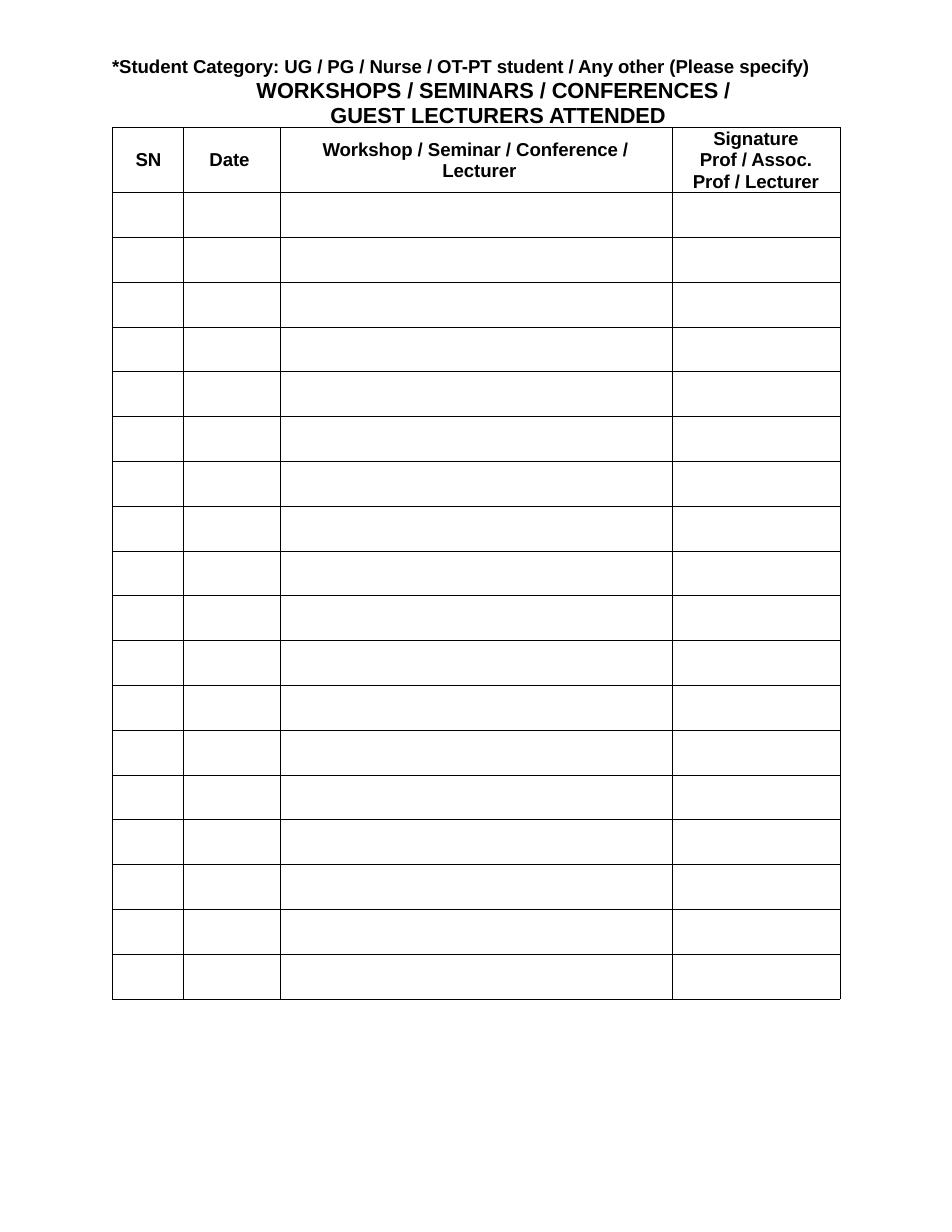
from lxml.etree import SubElement
from pptx import Presentation
from pptx.dml.color import RGBColor
from pptx.enum.text import MSO_ANCHOR as Anchor, MSO_AUTO_SIZE as AutoSize, PP_ALIGN as Align
from pptx.oxml.ns import qn
from pptx.util import Inches, Pt

BLACK = RGBColor(0, 0, 0)
FONT = "Arial"

# Content: "\v" is a line break inside a paragraph
CATEGORY = "*Student Category: UG / PG / Nurse / OT-PT student / Any other (Please specify)"
HEADING = "WORKSHOPS / SEMINARS / CONFERENCES /\vGUEST LECTURERS ATTENDED"
COLUMNS = [  # heading, width, text format
    ("SN", 0.64, dict(margin=0.21)),
    ("Date", 0.86, dict(margin=0.23)),
    ("Workshop / Seminar / Conference /\vLecturer", 3.5,
     dict(margin=1.45, indent=-1.07, line=13.8)),
    ("Signature\vProf / Assoc.\vProf / Lecturer", 1.5,
     dict(align=Align.CENTER, line=13.8)),
]
EMPTY_ROWS = 18
HEADER_HEIGHT, ROW_HEIGHT = 0.58, 0.4
TABLE_LEFT, TABLE_TOP = 1, 1.14


def write(paragraph, text, size=12, align=Align.LEFT, margin=0, indent=0, line=None, before=0):
    paragraph.text = text
    paragraph.alignment = align
    paragraph.space_before = Pt(before)
    if line:
        paragraph.line_spacing = Pt(line)
    properties = paragraph._p.get_or_add_pPr()
    properties.set("marL", str(Inches(margin)))
    properties.set("indent", str(Inches(indent)))
    for run in paragraph.runs:
        run.font.name, run.font.size, run.font.bold = FONT, Pt(size), True
        run.font.color.rgb = BLACK
        run._r.get_or_add_rPr().set("spc", "-5")


def clear_margins(target):
    target.margin_left = target.margin_top = target.margin_right = target.margin_bottom = 0


def style_cell(cell):
    clear_margins(cell)
    cell.vertical_anchor = Anchor.MIDDLE
    properties = cell._tc.get_or_add_tcPr()
    for side in ("lnL", "lnR", "lnT", "lnB"):
        border = SubElement(properties, qn(f"a:{side}"), w=str(Pt(0.5)))
        fill = SubElement(border, qn("a:solidFill"))
        SubElement(fill, qn("a:srgbClr"), val=str(BLACK))
    cell.fill.background()


presentation = Presentation()
presentation.slide_width, presentation.slide_height = Inches(8.5), Inches(11)
slide = presentation.slides.add_slide(presentation.slide_layouts[5])

# Category line and heading
title = slide.shapes.title
title.left, title.top = Inches(0.99), Inches(0.48)
title.width, title.height = Inches(6.4), Inches(0.68)
frame = title.text_frame
clear_margins(frame)
frame.margin_top = Inches(0.01)
frame.word_wrap, frame.auto_size, frame.vertical_anchor = True, AutoSize.NONE, Anchor.TOP
write(frame.paragraphs[0], CATEGORY, margin=0.01, line=14.1, before=1)
write(frame.add_paragraph(), HEADING, size=14, margin=1.96, indent=-0.66, line=16.1, before=0.8)

# Attendance table
width = sum(column[1] for column in COLUMNS)
height = HEADER_HEIGHT + EMPTY_ROWS * ROW_HEIGHT
table = slide.shapes.add_table(
    EMPTY_ROWS + 1, len(COLUMNS), Inches(TABLE_LEFT), Inches(TABLE_TOP),
    Inches(width), Inches(height)).table
table.first_row = table.horz_banding = False
for index, row in enumerate(table.rows):
    row.height = Inches(ROW_HEIGHT if index else HEADER_HEIGHT)
    for cell in row.cells:
        style_cell(cell)
for index, (heading, column_width, text_format) in enumerate(COLUMNS):
    table.columns[index].width = Inches(column_width)
    write(table.cell(0, index).text_frame.paragraphs[0], heading, **text_format)

presentation.save("out.pptx")
